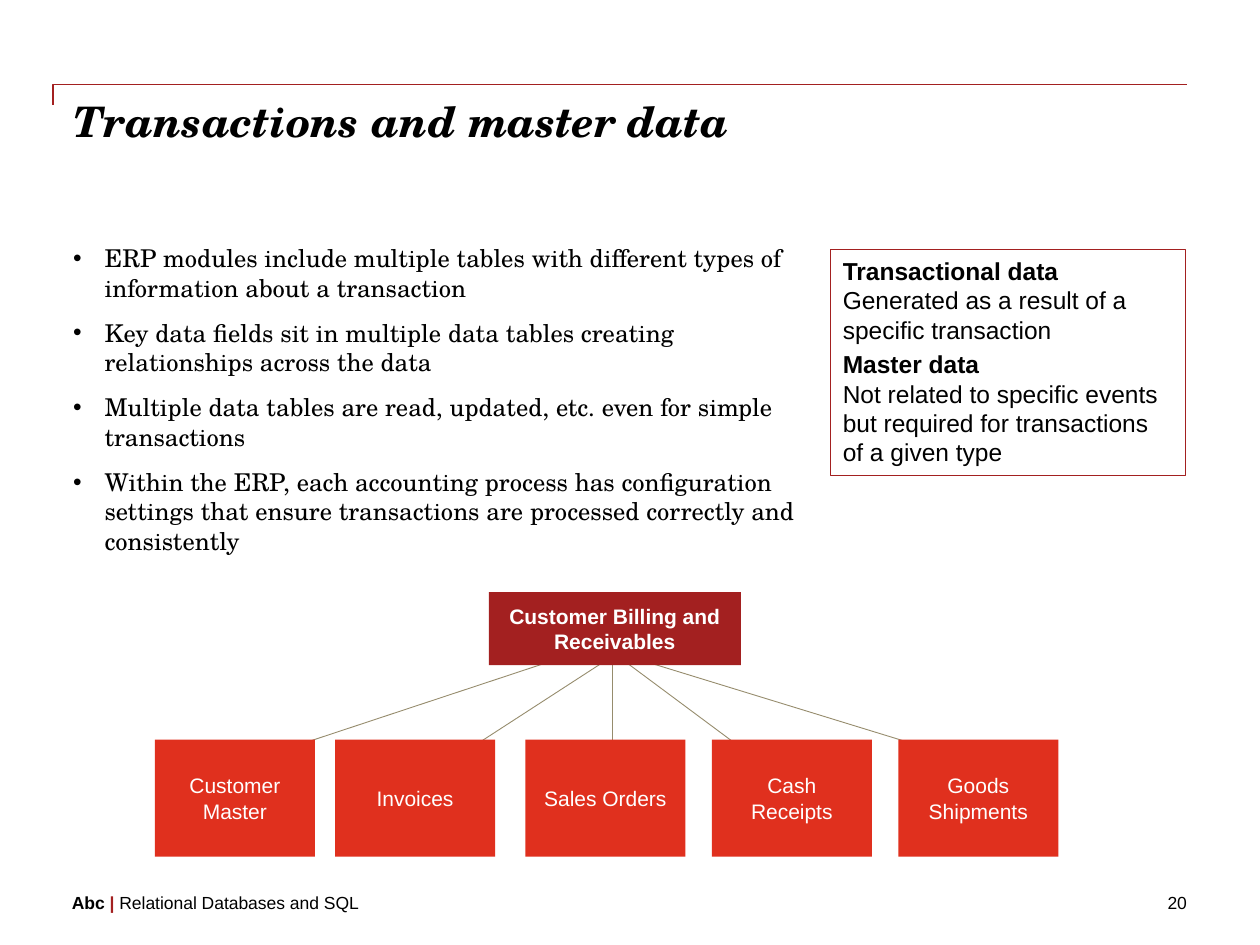
from lxml.etree import SubElement
from pptx import Presentation
from pptx.dml.color import RGBColor
from pptx.enum.shapes import MSO_CONNECTOR as Link, MSO_SHAPE as Shape
from pptx.enum.text import MSO_ANCHOR as Anchor, PP_ALIGN as Align
from pptx.oxml.ns import qn
from pptx.util import Inches, Pt

COLS, ROWS = 100, 75
UNIT = Inches(0.1)
SANS, SERIF = "Arial", "TeX Gyre Schola"
BLACK, WHITE, WINE, RED, SAND = "000000", "FFFFFF", "A32020", "E0301E", "968C6D"


def grid(*cells):
    return [round(cell * UNIT) for cell in cells]


def tint(code):
    return RGBColor.from_string(code)


def ink(line, code, width):
    line.color.rgb = tint(code)
    line.width = Pt(width)


def style(par, size, face=SANS, code=BLACK, bold=None):
    font = par.font
    font.size, font.name, font.bold = Pt(size), face, bold
    font.color.rgb = tint(code)


def label(slide, box):
    frame = slide.shapes.add_textbox(*grid(*box)).text_frame
    frame.word_wrap = True
    frame.margin_left = frame.margin_right = 0
    frame.margin_top = frame.margin_bottom = 0
    return frame


def block(slide, box, fill=None):
    shape = slide.shapes.add_shape(Shape.RECTANGLE, *grid(*box))
    shape.shadow.inherit = False
    if fill:
        shape.fill.solid()
        shape.fill.fore_color.rgb = tint(fill)
        shape.line.fill.background()
    else:
        shape.fill.background()
    shape.text_frame.word_wrap = True
    return shape


def node(slide, box, text, fill, bold=False):
    frame = block(slide, box, fill).text_frame
    frame.vertical_anchor = Anchor.MIDDLE
    par = frame.paragraphs[0]
    par.text, par.alignment = text, Align.CENTER
    style(par, 12, code=WHITE, bold=bold)


def add_rule(slide, box):
    x, y, w, h = grid(*box)
    path = slide.shapes.build_freeform(x, y + h)
    path.add_line_segments([(x, y), (x + w, y)], close=False)
    shape = path.convert_to_shape()
    shape.shadow.inherit = False
    shape.fill.background()
    ink(shape.line, WINE, 1)


def add_title(slide, box, text):
    par = label(slide, box).paragraphs[0]
    par.text = text
    style(par, 24, SERIF, bold=True)
    par.font.italic = True


def add_list(slide, box, items):
    frame = label(slide, box)
    frame.text = "\n".join(items)
    for par in frame.paragraphs:
        style(par, 14, SERIF)
        par.space_after = Pt(9)
        props = par._p.get_or_add_pPr()
        props.set("marL", str(Inches(0.25)))
        props.set("indent", str(-Inches(0.25)))
        SubElement(props, qn("a:buFont"), typeface=SANS)
        SubElement(props, qn("a:buChar"), char="•")


def add_note(slide, box, terms):
    shape = block(slide, box)
    ink(shape.line, WINE, 0.5)
    frame = shape.text_frame
    frame.vertical_anchor = Anchor.TOP
    for i, (term, text) in enumerate(terms):
        par = frame.add_paragraph() if i else frame.paragraphs[0]
        par.alignment = Align.LEFT
        par.space_before = Pt(3 * i)
        style(par, 14)
        head = par.add_run()
        head.text, head.font.bold = term, True
        par.add_line_break()
        par.add_run().text = text


def add_tree(slide, box, root, leaves, links):
    x, y, w, h = box
    wide, tall = 12.7, 9.3
    for x1, y1, x2, y2 in links:
        ends = grid(x + x1, y + y1, x + x2, y + y2)
        line = slide.shapes.add_connector(Link.STRAIGHT, *ends)
        ink(line.line, SAND, 0.5)
        SubElement(line._element.spPr, qn("a:effectLst"))
    for left, text in leaves:
        node(slide, (x + left, y + h - tall, wide, tall), text, RED)
    node(slide, (x + 26.5, y, 20, 5.8), root, WINE, True)


def add_foot(slide, box, firm, topic, page):
    x, y, w, h = box
    par = label(slide, (x, y, w * 0.8, h)).paragraphs[0]
    style(par, 10)
    for text, code, bold in ((firm, BLACK, True), (" | ", WINE, True), (topic, BLACK, False)):
        run = par.add_run()
        run.text, run.font.bold = text, bold
        run.font.color.rgb = tint(code)
    par = label(slide, (x + w * 0.8, y, w * 0.2, h)).paragraphs[0]
    par.text, par.alignment = page, Align.RIGHT
    style(par, 10)


def main():
    deck = Presentation()
    deck.slide_width, deck.slide_height = grid(COLS, ROWS)
    slide = deck.slides.add_slide(deck.slide_layouts[6])
    add_rule(slide, (4.2, 6.7, 90, 1.6))
    add_foot(slide, (5.7, 70.8, 88.5, 1.7), "Abc", "Relational Databases and SQL", "20")
    add_title(slide, (5.8, 7.6, 88.3, 4), "Transactions and master data")
    add_list(slide, (5.8, 19.3, 58.8, 25), [
        "ERP modules include multiple tables with different types of information about a transaction",
        "Key data fields sit in multiple data tables creating relationships across the data",
        "Multiple data tables are read, updated, etc. even for simple transactions",
        "Within the ERP, each accounting process has configuration settings that ensure "
        "transactions are processed correctly and consistently",
    ])
    add_note(slide, (65.9, 19.8, 28.2, 17.9), [
        ("Transactional data", "Generated as a result of a specific transaction"),
        ("Master data", "Not related to specific events but required for transactions of a given type"),
    ])
    leaves = [(0, "Customer Master"), (14.3, "Invoices"), (29.4, "Sales Orders"),
              (44.2, "Cash Receipts"), (59, "Goods Shipments")]
    links = [(6, 13.9, 33.8, 4.7), (22.7, 13.9, 36.9, 4.7), (36.3, 13.9, 36.3, 4.7),
             (48.6, 13.9, 36.9, 5.2), (63, 12.9, 36.3, 4.7)]
    add_tree(slide, (12.3, 47, 71.7, 21), "Customer Billing and Receivables", leaves, links)
    deck.save("out.pptx")


if __name__ == "__main__":
    main()
